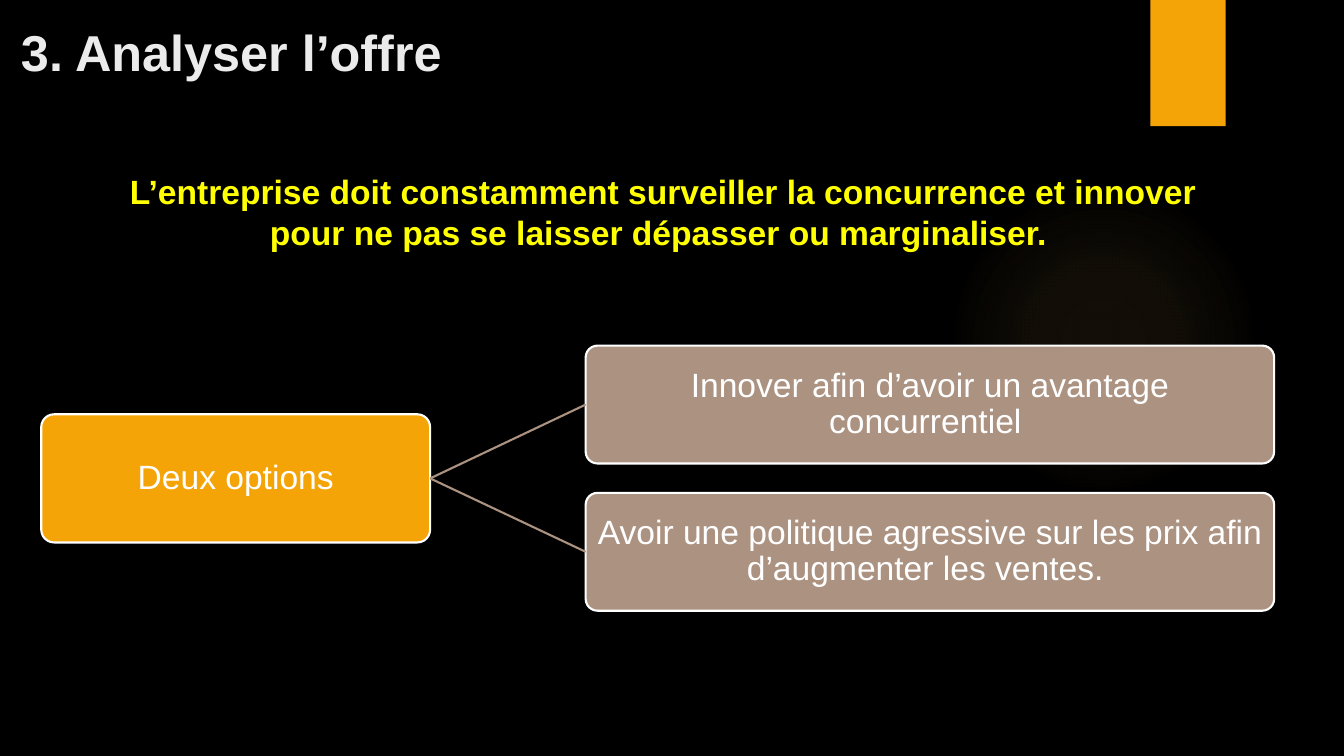
from lxml import etree
from pptx import Presentation
from pptx import util as u
from pptx.dml.color import RGBColor
from pptx.enum import shapes, text
from pptx.oxml import parse_xml
from pptx.oxml.ns import nsdecls, qn

COLORS = {
    "background": "000000",
    "accent": "F5A408",
    "option": "AB9281",
    "glow": "FAC96A",
    "title": "EBEBEB",
    "message": "FFFF00",
    "white": "FFFFFF",
}
OPTIONS = [
    "Innover afin d’avoir un avantage concurrentiel ",
    "Avoir une politique agressive sur les prix afin d’augmenter les ventes. ",
]
OPTION_TOP, OPTION_STEP = 8.71, 3.71


def rgb(name):
    return RGBColor.from_string(COLORS[name])


class SlideBuilder:
    """Draws styled elements on one slide; all lengths are in centimetres."""

    font = "Arial"
    line_width = u.Pt(1.5)

    def __init__(self, slide):
        self.slide = slide
        slide.background.fill.solid()
        slide.background.fill.fore_color.rgb = rgb("background")

    def set_words(self, shape, words, size, color, bold=False, align=None):
        shape.text_frame.word_wrap = True
        shape.text_frame.text = words
        paragraph = shape.text_frame.paragraphs[0]
        paragraph.alignment = align
        font = paragraph.runs[0].font
        font.name, font.size, font.bold = self.font, u.Pt(size), bold
        font.color.rgb = rgb(color)
        return paragraph

    def shape(self, kind, box, color):
        shape = self.slide.shapes.add_shape(kind, *map(u.Cm, box))
        shape.shadow.inherit = False
        shape.fill.solid()
        shape.fill.fore_color.rgb = rgb(color)
        shape.line.fill.background()
        return shape

    def glow(self, box):
        """Add a circle that fades out from its centre."""
        circle = self.shape(shapes.MSO_SHAPE.OVAL, box, "glow")
        stops = "".join(
            f'<a:gs pos="{position * 1000}"><a:srgbClr val="{COLORS["glow"]}">'
            f'<a:alpha val="{opacity * 1000}"/></a:srgbClr></a:gs>'
            for position, opacity in [(0, 7), (36, 6), (69, 0), (100, 0)]
        )
        gradient = parse_xml(
            f'<a:gradFill {nsdecls("a")} rotWithShape="1"><a:gsLst>{stops}</a:gsLst>'
            '<a:path path="circle"><a:fillToRect l="50000" t="50000" r="50000" b="50000"/>'
            "</a:path></a:gradFill>"
        )
        properties = circle._element.spPr
        properties.replace(properties.find(qn("a:solidFill")), gradient)

    def text(self, box, words, size, color, anchor, align):
        shape = self.slide.shapes.add_textbox(*map(u.Cm, box))
        shape.text_frame.vertical_anchor = anchor
        self.set_words(shape, words, size, color, True, align)

    def node(self, box, words, color):
        node = self.shape(shapes.MSO_SHAPE.ROUNDED_RECTANGLE, box, color)
        node.adjustments[0] = 0.1
        node.line.color.rgb = rgb("white")
        node.line.width = self.line_width
        frame = node.text_frame
        frame.margin_left = frame.margin_right = u.Cm(0.05)
        frame.margin_top = frame.margin_bottom = u.Cm(0.05)
        frame.vertical_anchor = text.MSO_ANCHOR.MIDDLE
        paragraph = self.set_words(node, words, 24, "white", align=text.PP_ALIGN.CENTER)
        paragraph.line_spacing = 0.9
        return node

    def branch(self, parent, child):
        """Join the right side of parent to the left side of child."""
        line = self.slide.shapes.add_connector(shapes.MSO_CONNECTOR.STRAIGHT, 0, 0, 0, 0)
        line.begin_connect(parent, 3)
        line.end_connect(child, 1)
        line.line.color.rgb = rgb("option")
        line.line.width = self.line_width
        etree.SubElement(line._element.spPr, qn("a:effectLst"))


def main():
    presentation = Presentation()
    presentation.slide_width, presentation.slide_height = u.Cm(33.87), u.Cm(19.05)
    builder = SlideBuilder(presentation.slides.add_slide(presentation.slide_layouts[6]))

    builder.glow((23.9, 4.65, 7.82, 7.82))
    builder.shape(shapes.MSO_SHAPE.RECTANGLE, (28.99, 0, 1.9, 3.18), "accent")
    builder.text((0.28, 0, 30, 2.18), "3. Analyser l’offre", 36, "title",
                 text.MSO_ANCHOR.BOTTOM, text.PP_ALIGN.LEFT)
    builder.text((2.46, 4.19, 28.5, 2.31),
                 "L’entreprise doit constamment surveiller la concurrence et innover "
                 "pour ne pas se laisser dépasser ou marginaliser. ",
                 24, "message", text.MSO_ANCHOR.TOP, text.PP_ALIGN.CENTER)

    root = builder.node((1.04, 10.44, 9.8, 3.23), "Deux options", "accent")
    for index, words in enumerate(OPTIONS):
        top = OPTION_TOP + index * OPTION_STEP
        option = builder.node((14.76, top, 17.35, 2.97), words, "option")
        builder.branch(root, option)

    presentation.save("out.pptx")


if __name__ == "__main__":
    main()
